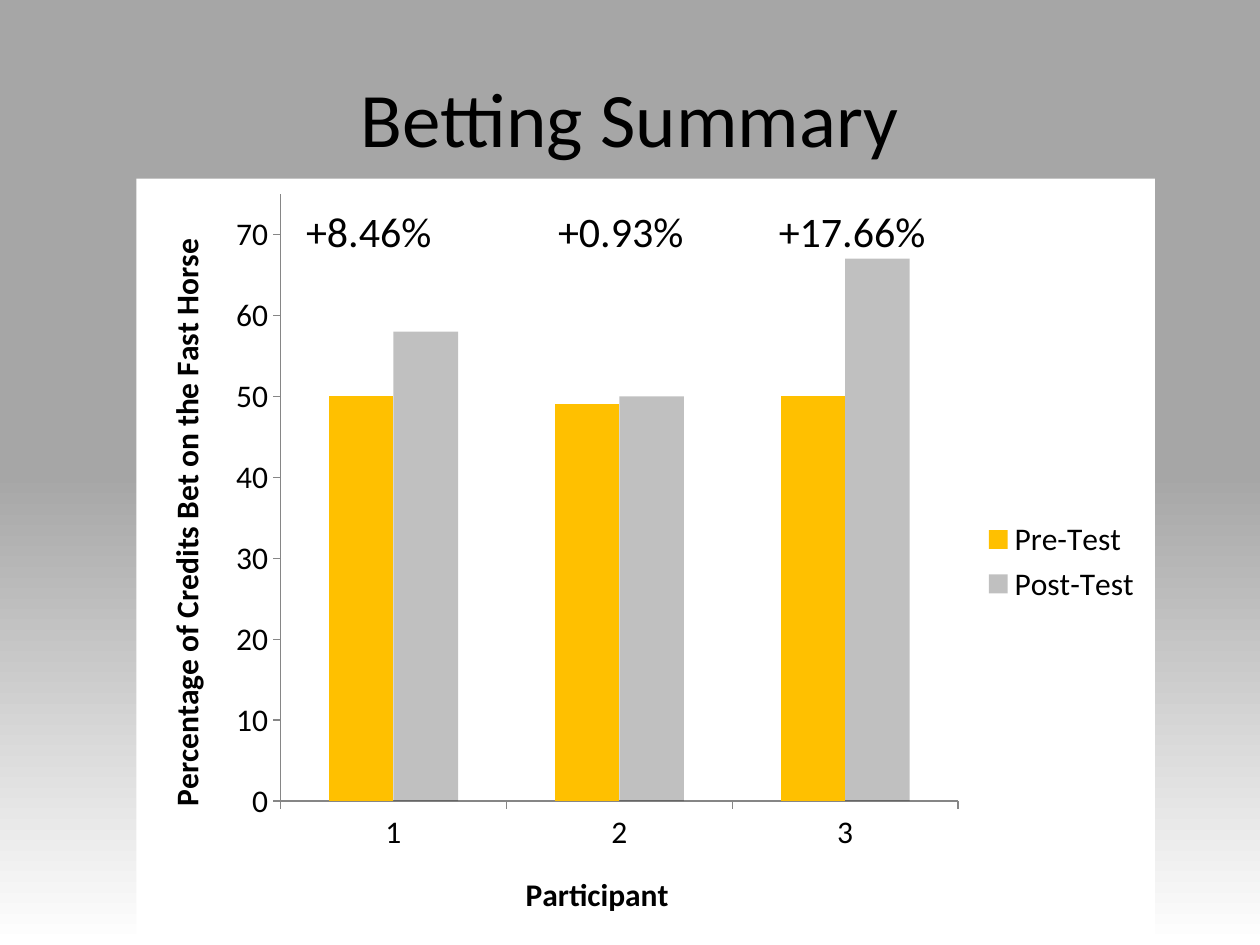
import pptx
import pptx.chart.data
import pptx.dml.color
import pptx.enum.chart
import pptx.enum.text
import pptx.oxml
import pptx.oxml.ns
import pptx.util
from lxml import etree

Cm = pptx.util.Cm
Pt = pptx.util.Pt

COLORS = {
    "text": "000000",
    "panel": "FFFFFF",
    "backdrop": "A6A6A6",
    "axis": "868686",
    "pre": "FFC000",
    "post": "0D0D0D",
}
SERIES = [
    ("Pre-Test", (50, 49, 50), "pre", None),
    ("Post-Test", (58, 50, 67), "post", 26),
]
CHANGES = [("+8.46%", 5.92, 3.05), ("+0.93%", 11, 3.05), ("+17.66%", 15.45, 3.48)]


def rgb(name):
    return pptx.dml.color.RGBColor.from_string(COLORS[name])


def apply(target, values):
    for attribute, value in values.items():
        setattr(target, attribute, value)


def set_opacity(fill_parent, percent):
    color = fill_parent.find(".//" + pptx.oxml.ns.qn("a:srgbClr"))
    etree.SubElement(color, pptx.oxml.ns.qn("a:alpha"), val=str(percent * 1000))


class SlideBuilder:
    font_name = "Calibri"

    def __init__(self, slide):
        self.slide = slide

    def style(self, font, size, bold=False):
        apply(font, {"name": self.font_name, "size": Pt(size), "bold": bold})
        font.color.rgb = rgb("text")

    def background(self):
        """Fade from white at the bottom to grey at mid-height."""
        fill = self.slide.background.fill
        fill.gradient()
        fill.gradient_angle = 90
        for stop, name, position in zip(fill.gradient_stops, ("panel", "backdrop"), (0, 0.5)):
            stop.color.rgb = rgb(name)
            stop.position = position

    def title(self, text):
        title = self.slide.shapes.title
        apply(title, {"left": Cm(1.27), "top": Cm(0.76),
                      "width": Cm(22.86), "height": Cm(3.18)})
        title.text_frame.text = text
        paragraph = title.text_frame.paragraphs[0]
        paragraph.alignment = pptx.enum.text.PP_ALIGN.CENTER
        self.style(paragraph.runs[0].font, 44)

    def label(self, text, left, top, width, height):
        box = self.slide.shapes.add_textbox(Cm(left), Cm(top), Cm(width), Cm(height))
        apply(box.text_frame, {
            "text": text,
            "word_wrap": False,
            "auto_size": pptx.enum.text.MSO_AUTO_SIZE.SHAPE_TO_FIT_TEXT,
        })
        self.style(box.text_frame.paragraphs[0].runs[0].font, 24)

    def axis(self, axis, title, values):
        apply(axis, {
            "has_major_gridlines": False,
            "major_tick_mark": pptx.enum.chart.XL_TICK_MARK.OUTSIDE,
            **values,
        })
        axis.format.line.color.rgb = rgb("axis")
        axis.axis_title.text_frame.text = title
        run = axis.axis_title.text_frame.paragraphs[0].runs[0]
        self.style(run.font, 18, bold=True)

    def column_chart(self, categories, series_rows, left, top, width, height):
        data = pptx.chart.data.CategoryChartData()
        data.categories = categories
        for name, values, _, _ in series_rows:
            data.add_series(name, values)
        chart = self.slide.shapes.add_chart(
            pptx.enum.chart.XL_CHART_TYPE.COLUMN_CLUSTERED,
            Cm(left), Cm(top), Cm(width), Cm(height), data).chart
        apply(chart, {"has_title": False, "has_legend": True})
        self.style(chart.font, 18)
        apply(chart.legend, {
            "position": pptx.enum.chart.XL_LEGEND_POSITION.RIGHT,
            "include_in_layout": False,
        })
        apply(chart.plots[0], {"gap_width": 150, "overlap": 0, "vary_by_categories": False})
        for series, (_, _, color, opacity) in zip(chart.plots[0].series, series_rows):
            series.format.fill.solid()
            series.format.fill.fore_color.rgb = rgb(color)
            if opacity is not None:
                set_opacity(series.format.fill._xPr, opacity)
        self.axis(chart.category_axis, "Participant", {})
        self.axis(chart.value_axis, "Percentage of Credits Bet on the Fast Horse",
                  {"minimum_scale": 0, "maximum_scale": 75, "major_unit": 10})
        self.fill_chart_area(chart)

    def fill_chart_area(self, chart):
        area = pptx.oxml.parse_xml(
            f'<c:spPr {pptx.oxml.ns.nsdecls("c", "a")}><a:solidFill>'
            f'<a:srgbClr val="{COLORS["panel"]}"/></a:solidFill>'
            '<a:ln><a:noFill/></a:ln></c:spPr>')
        chart._chartSpace.find(pptx.oxml.ns.qn("c:chart")).addnext(area)


def main():
    deck = pptx.Presentation()
    apply(deck, {"slide_width": Cm(25.4), "slide_height": Cm(19.05)})
    builder = SlideBuilder(deck.slides.add_slide(deck.slide_layouts[5]))
    builder.background()
    builder.title("Betting Summary")
    builder.column_chart(("1", "2", "3"), SERIES, 2.75, 3.6, 20.53, 15.45)
    for text, left, width in CHANGES:
        builder.label(text, left, 4.02, width, 1.28)
    deck.save("out.pptx")


if __name__ == "__main__":
    main()
